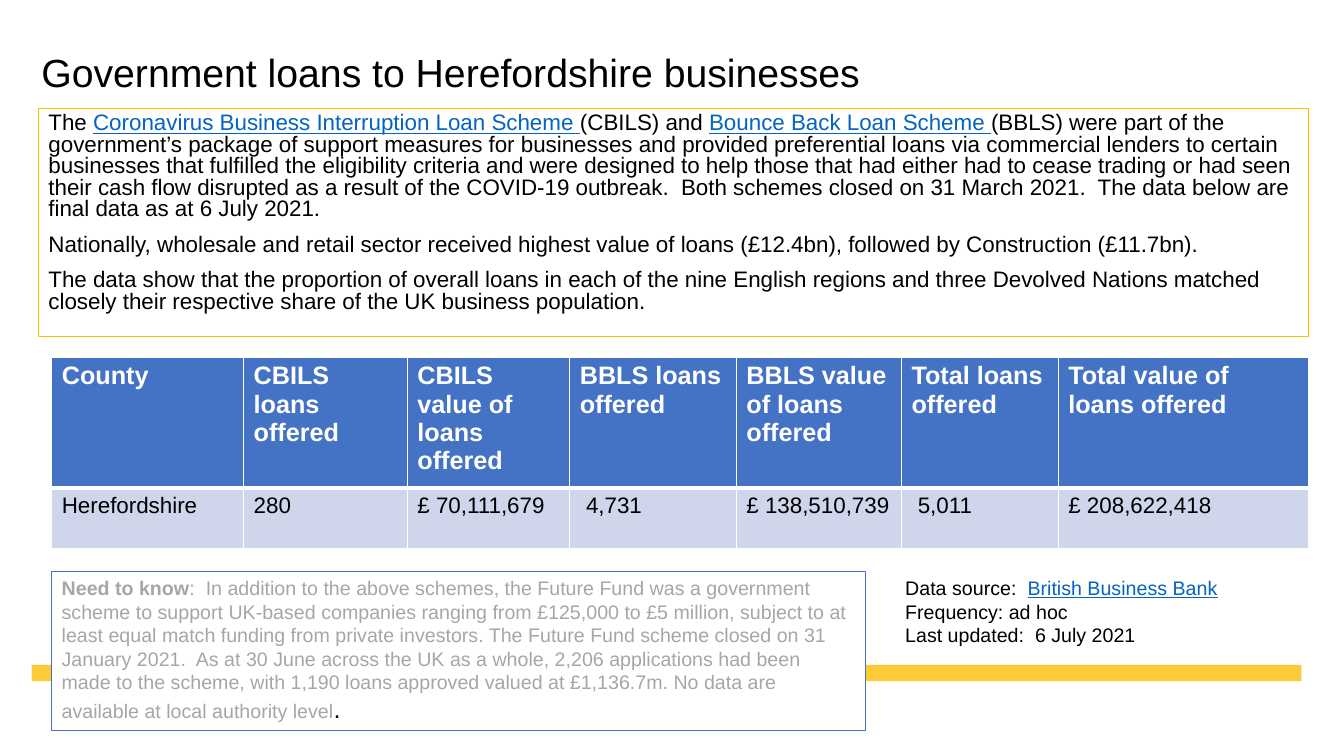
from pptx import Presentation
from pptx.dml.color import RGBColor
from pptx.enum.shapes import MSO_SHAPE as Kind
from pptx.enum.text import MSO_ANCHOR as Anchor, PP_ALIGN as Align
from pptx.oxml import parse_xml
from pptx.oxml.ns import nsdecls
from pptx.util import Pt

BLACK, WHITE, BLUE = "000000", "FFFFFF", "4472C4"
GOLD, AMBER, LINK = "FFCA38", "FFC000", "0563C1"
GREY, PALE = "A6A6A6", "CFD5EA"


def paint(fmt, color):
    """Give a fill a solid colour."""
    fmt.solid()
    fmt.fore_color.rgb = RGBColor.from_string(color)


class Page:
    font = "Arial"

    def __init__(self, slide):
        self.slide = slide

    def fill_text(self, frame, paras, size, color=BLACK, bold=False, lead=None, gap=0):
        """Each paragraph is a string or a list of (text, style) runs."""
        frame.word_wrap = True
        for i, runs in enumerate(paras):
            para = frame.paragraphs[0] if i == 0 else frame.add_paragraph()
            para.alignment = Align.LEFT
            if lead:
                para.line_spacing = lead
            para.space_before = Pt(gap if i else 0)
            para.font.name = self.font
            para.font.size = Pt(size)
            para.font.bold = bold
            paint(para.font.fill, color)
            for text, style in [(runs, {})] if isinstance(runs, str) else runs:
                run = para.add_run()
                run.text = text
                if "color" in style:
                    paint(run.font.fill, style["color"])
                if "size" in style:
                    run.font.size = Pt(style["size"])
                run.font.bold = style.get("bold")
                run.font.underline = style.get("underline")

    def text(self, x, y, w, h, paras, size, anchor=Anchor.TOP, **style):
        box = self.slide.shapes.add_textbox(Pt(x), Pt(y), Pt(w), Pt(h))
        box.text_frame.vertical_anchor = anchor
        self.fill_text(box.text_frame, paras, size, **style)

    def rect(self, x, y, w, h, fill=None, line=None):
        shape = self.slide.shapes.add_shape(Kind.RECTANGLE, Pt(x), Pt(y), Pt(w), Pt(h))
        shape.shadow.inherit = False
        if fill:
            paint(shape.fill, fill)
        else:
            shape.fill.background()
        if line:
            paint(shape.line.fill, line)
            shape.line.width = Pt(0.75)
        else:
            shape.line.fill.background()
        return shape

    def panel(self, x, y, w, h, paras, size, fill=None, line=None, **style):
        frame = self.rect(x, y, w, h, fill, line).text_frame
        frame.vertical_anchor = Anchor.TOP
        self.fill_text(frame, paras, size, **style)

    def edge(self, cell, rule):
        """Draw white borders, the lower one as thick as rule."""
        props = cell._tc.get_or_add_tcPr()
        sides = {"lnL": 1, "lnR": 1, "lnT": 1, "lnB": rule}
        for i, (side, width) in enumerate(sides.items()):
            props.insert(i, parse_xml(
                f'<a:{side} {nsdecls("a")} w="{Pt(width)}"><a:solidFill>'
                f'<a:srgbClr val="{WHITE}"/></a:solidFill></a:{side}>'))

    def table(self, x, y, cols, rows, data, looks):
        grid = self.slide.shapes.add_table(
            len(rows), len(cols), Pt(x), Pt(y), Pt(sum(cols)), Pt(sum(rows))).table
        for col, width in zip(grid.columns, cols):
            col.width = Pt(width)
        for row, height, words, (fill, rule, style) in zip(grid.rows, rows, data, looks):
            row.height = Pt(height)
            for cell, word in zip(row.cells, words):
                paint(cell.fill, fill)
                self.edge(cell, rule)
                self.fill_text(cell.text_frame, [word], **style)


def main():
    deck = Presentation()
    deck.slide_width, deck.slide_height = Pt(960), Pt(540)
    page = Page(deck.slides.add_slide(deck.slide_layouts[6]))
    link = {"color": LINK, "underline": True}

    # Footer band and title
    page.rect(22.5, 475, 907, 11.5, fill=GOLD)
    page.text(22.5, 29, 907, 49, ["Government loans to Herefordshire businesses"], 28,
              anchor=Anchor.MIDDLE, lead=0.9)

    # Introduction
    page.panel(27.5, 77.5, 907, 163, [
        [("The ", {}),
         ("Coronavirus Business Interruption Loan Scheme ", link),
         ("(CBILS) and ", {}),
         ("Bounce Back Loan Scheme ", link),
         ("(BBLS) were part of the government’s package of support measures for "
          "businesses and provided preferential loans via commercial lenders to certain "
          "businesses that fulfilled the eligibility criteria and were designed to help "
          "those that had either had to cease trading or had seen their cash flow "
          "disrupted as a result of the COVID-19 outbreak.  Both schemes closed on "
          "31 March 2021.  The data below are final data as at 6 July 2021.", {})],
        "Nationally, wholesale and retail sector received highest value of loans "
        "(£12.4bn), followed by Construction (£11.7bn).",
        "The data show that the proportion of overall loans in each of the nine English "
        "regions and three Devolved Nations matched closely their respective share of "
        "the UK business population.",
    ], 16, line=AMBER, lead=0.8, gap=10)

    # Loans table
    page.table(37, 255, [137, 117, 116, 119, 118, 112, 179], [87.5, 43], [
        ["County", "CBILS loans offered", "CBILS value of loans offered",
         "BBLS loans offered", "BBLS value of loans offered",
         "Total loans offered", "Total value of loans offered"],
        ["Herefordshire", "280", "£ 70,111,679", " 4,731",
         "£ 138,510,739", " 5,011", "£ 208,622,418"],
    ], [
        (BLUE, 3, {"size": 18, "color": WHITE, "bold": True}),
        (PALE, 1, {"size": 16}),
    ])

    # Data source
    page.text(639.5, 408, 253.5, 58.5, [
        [("Data source:  ", {}), ("British Business Bank", link)],
        "Frequency: ad hoc",
        "Last updated:  6 July 2021",
    ], 14)

    # Need to know
    page.panel(37, 408, 581, 114, [[
        ("Need to know", {"bold": True}),
        (":  In addition to the above schemes, the Future Fund was a government scheme "
         "to support UK-based companies ranging from £125,000 to £5 million, subject to "
         "at least equal match funding from private investors. The Future Fund scheme "
         "closed on 31 January 2021.  As at 30 June across the UK as a whole, 2,206 "
         "applications had been made to the scheme, with 1,190 loans approved valued at "
         "£1,136.7m. No data are available at local authority level", {}),
        (".", {"size": 18, "color": BLACK}),
    ]], 14, fill=WHITE, line=BLUE, color=GREY)

    deck.save("out.pptx")


if __name__ == "__main__":
    main()
